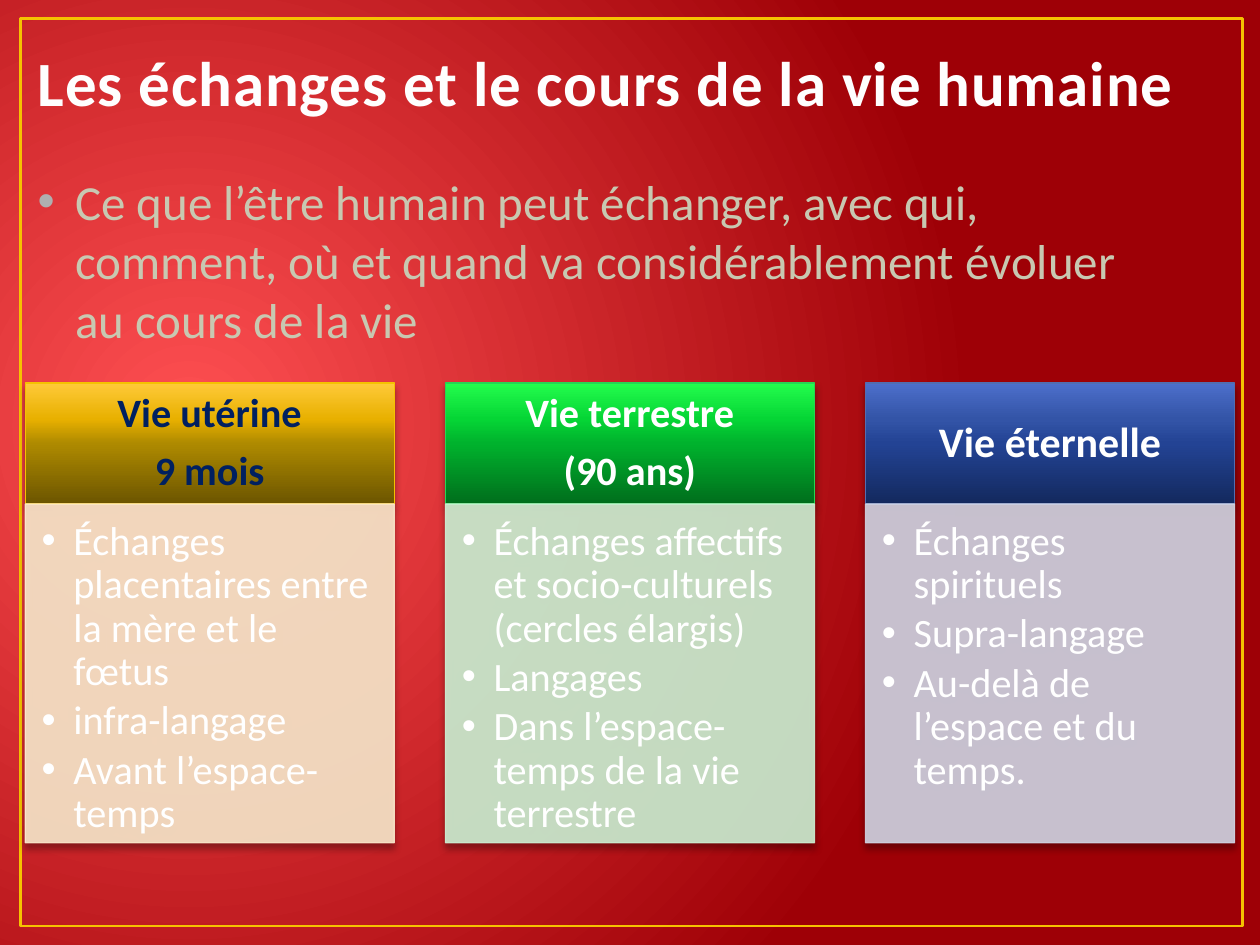
from lxml import etree
from pptx import Presentation
from pptx import util as u
from pptx.dml import color
from pptx.enum import shapes, text
from pptx.oxml import ns

COLOURS = {
    "glow": "FF5052", "red": "9E0006", "gold": "F5C201", "title": "FEFEFE",
    "intro": "C8C8B1", "bullet": "AFAFAF", "white": "FFFFFF", "navy": "002060",
    "shadow": "000000",
}
FONT = "Calibri"
HEADER_STOPS = (0, 50, 70, 100)
STAGES = [
    {"heading": ["Vie utérine", "9 mois"], "size": 23, "ink": "navy",
     "gradient": ["6C5500", "AE8A00", "E8B000", "FFCA39"],
     "line": "F5C201", "panel": "FBE9CC",
     "points": ["Échanges placentaires entre la mère et le fœtus",
                "infra-langage", "Avant l’espace-temps"]},
    {"heading": ["Vie terrestre", "(90 ans)"], "size": 23, "ink": "white",
     "gradient": ["006E1C", "00B22D", "05D535", "24FD4D"],
     "line": "28D453", "panel": "CDF1D4",
     "points": ["Échanges affectifs et socio-culturels (cercles élargis)",
                "Langages", "Dans l’espace-temps de la vie terrestre"]},
    {"heading": ["Vie éternelle"], "size": 24, "ink": "white",
     "gradient": ["13295E", "234394", "3354A7", "4D6FCB"],
     "line": "526DB0", "panel": "D1D5E4",
     "points": ["Échanges spirituels", "Supra-langage",
                "Au-delà de l’espace et du temps."]},
]


def rgb(value):
    return color.RGBColor.from_string(value)


def set_attributes(target, values):
    for name, value in values.items():
        setattr(target, name, value)


def add_element(parent, tag, **attributes):
    element = etree.SubElement(parent, ns.qn(tag))
    for name, value in attributes.items():
        element.set(name, str(value))
    return element


def add_colour(parent, value, alpha=None):
    element = add_element(parent, "a:srgbClr", val=value)
    if alpha is not None:
        add_element(element, "a:alpha", val=alpha * 1000)


def make_gradient(parent, stops):
    solid = parent.find(".//" + ns.qn("a:solidFill"))
    gradient = etree.Element(ns.qn("a:gradFill"), rotWithShape="1")
    stop_list = add_element(gradient, "a:gsLst")
    for position, value in stops:
        add_colour(add_element(stop_list, "a:gs", pos=position * 1000), value)
    solid.getparent().replace(solid, gradient)
    return gradient


def add_shadow(shape):
    effects = shape.element.spPr.find(ns.qn("a:effectLst"))
    shadow = add_element(effects, "a:outerShdw", blurRad=u.Pt(4), dist=u.Pt(3),
                         dir=5400000, rotWithShape=0)
    add_colour(shadow, COLOURS["shadow"], 35)


def add_bullet(paragraph, indent, colour):
    properties = paragraph._p.get_or_add_pPr()
    properties.set("marL", str(indent))
    properties.set("indent", str(-indent))
    add_colour(add_element(properties, "a:buClr"), colour)
    add_element(properties, "a:buFont", typeface="Arial")
    add_element(properties, "a:buChar", char="•")


def write(frame, lines, colour, font, layout, indent=None, bullet=None):
    for index, line in enumerate(lines):
        paragraph = frame.add_paragraph() if index else frame.paragraphs[0]
        set_attributes(paragraph, layout)
        if indent is not None:
            add_bullet(paragraph, indent, bullet or colour)
        run = paragraph.add_run()
        run.text = line
        set_attributes(run.font, {"name": FONT, **font})
        run.font.color.rgb = rgb(colour)


def add_box(slide, box, line, width, fill=None):
    shape = slide.shapes.add_shape(shapes.MSO_SHAPE.RECTANGLE, *map(u.Cm, box))
    shape.shadow.inherit = False
    shape.line.color.rgb = rgb(line)
    shape.line.width = u.Pt(width)
    if fill is None:
        shape.fill.background()
    else:
        shape.fill.solid()
        shape.fill.fore_color.rgb = rgb(fill)
    return shape


def set_frame(frame, anchor, left, top, right, bottom):
    set_attributes(frame, {
        "word_wrap": True, "auto_size": text.MSO_AUTO_SIZE.NONE,
        "vertical_anchor": anchor,
        "margin_left": u.Cm(left), "margin_top": u.Cm(top),
        "margin_right": u.Cm(right), "margin_bottom": u.Cm(bottom),
    })


def add_background(slide, frame_box):
    slide.background.fill.solid()
    slide.background.fill.fore_color.rgb = rgb(COLOURS["red"])
    gradient = make_gradient(slide.element, [(0, COLOURS["glow"]), (100, COLOURS["red"])])
    circle = add_element(gradient, "a:path", path="circle")
    add_element(circle, "a:fillToRect", l=15000, t=50000, r=85000, b=60000)
    add_box(slide, frame_box, COLOURS["gold"], 1.5)


def add_title(slide, box):
    title = slide.shapes.title
    set_attributes(title, dict(zip(("left", "top", "width", "height"), map(u.Cm, box))))
    set_frame(title.text_frame, text.MSO_ANCHOR.BOTTOM, 0.25, 0.13, 0.25, 0.13)
    write(title.text_frame, ["Les échanges et le cours de la vie humaine"],
          COLOURS["title"], {"size": u.Pt(36), "bold": True},
          {"alignment": text.PP_ALIGN.LEFT})
    title.text_frame.paragraphs[0].runs[0].font._element.set("spc", "50")


def add_intro(slide, box):
    frame = slide.shapes.add_textbox(*map(u.Cm, box)).text_frame
    set_frame(frame, text.MSO_ANCHOR.TOP, 0.25, 0.13, 0.25, 0.13)
    write(frame, ["Ce que l’être humain peut échanger, avec qui, comment, "
                  "où et quand va considérablement évoluer au cours de la vie"],
          COLOURS["intro"], {"size": u.Pt(28)}, {"space_before": u.Pt(5.6)},
          u.Cm(0.76), COLOURS["bullet"])


def add_stage(slide, box, stage, header_height=2.44):
    left, top, width, height = box
    header = add_box(slide, (left, top, width, header_height),
                     stage["line"], 0.75, stage["gradient"][0])
    gradient = make_gradient(header.element.spPr, zip(HEADER_STOPS, stage["gradient"]))
    add_element(gradient, "a:lin", ang=16200000, scaled=0)
    set_frame(header.text_frame, text.MSO_ANCHOR.MIDDLE, 0.46, 0.25, 0.46, 0.25)
    write(header.text_frame, stage["heading"], COLOURS[stage["ink"]],
          {"size": u.Pt(stage["size"]), "bold": True},
          {"alignment": text.PP_ALIGN.CENTER, "line_spacing": 0.9,
           "space_after": u.Pt(8)})

    panel = add_box(slide, (left, top + header_height, width, height - header_height),
                    stage["panel"], 0.75, stage["panel"])
    for tint in panel.element.spPr.iter(ns.qn("a:srgbClr")):
        add_element(tint, "a:alpha", val=90000)
    set_frame(panel.text_frame, text.MSO_ANCHOR.TOP, 0.33, 0.33, 0.46, 0.5)
    write(panel.text_frame, stage["points"], COLOURS["white"], {"size": u.Pt(23)},
          {"alignment": text.PP_ALIGN.LEFT, "line_spacing": 0.9,
           "space_after": u.Pt(3.4)}, u.Cm(0.64))

    for shape in (header, panel):
        add_shadow(shape)


def add_stages(slide, box, column_width=7.44):
    left, top, width, height = box
    pitch = (width - column_width) / (len(STAGES) - 1)
    for index, stage in enumerate(STAGES):
        add_stage(slide, (left + index * pitch, top, column_width, height), stage)


def main():
    presentation = Presentation()
    presentation.slide_width = u.Cm(25.4)
    presentation.slide_height = u.Cm(19.05)
    slide = presentation.slides.add_slide(presentation.slide_layouts[5])
    add_background(slide, (0.41, 0.38, 24.64, 18.29))
    add_title(slide, (0.51, 0.53, 24.41, 2.01))
    add_intro(slide, (0.51, 3.33, 22.83, 4.67))
    add_stages(slide, (0.51, 7.72, 24.38, 9.27))
    presentation.save("out.pptx")


if __name__ == "__main__":
    main()
